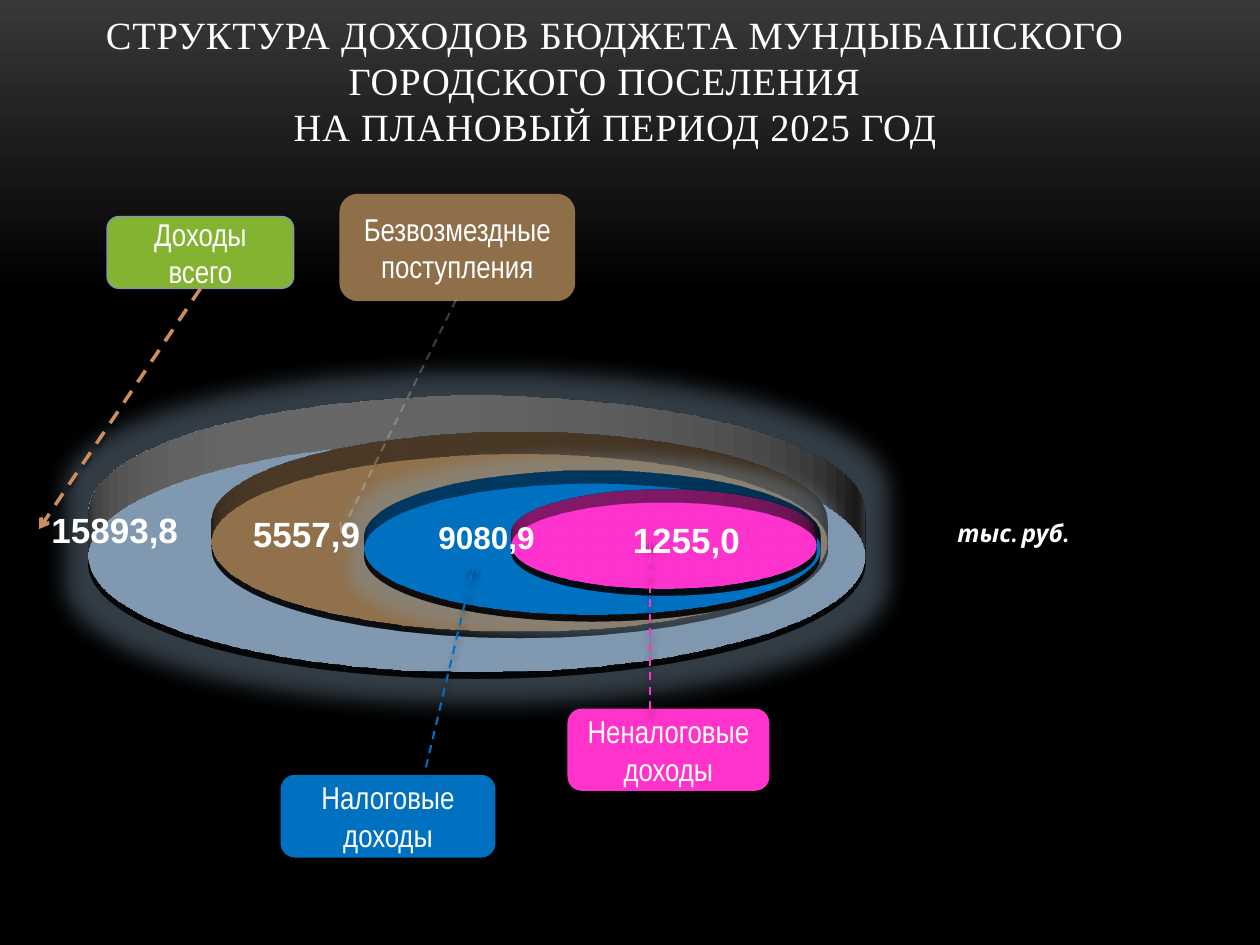
from lxml import etree
from pptx import Presentation
from pptx.dml.color import RGBColor
from pptx.enum import dml, shapes, text
from pptx.oxml import ns
from pptx.util import Pt

HUES = {
    "white": "FFFFFF", "black": "000000", "smoke": "383838",
    "steel": "7E97AD", "edge": "5D7080", "green": "83B330",
    "brown": "8F6F4A", "blue": "0070C0", "pink": "FF33CC",
    "copper": "CC8E60", "pale": "EFEAE6", "silver": "C8C8C8",
}
DISCS = [
    ((50.4, 185.8, 444.2, 264.2), "steel", "edge", "silver", 300, 30, 26),
    ((121, 253.4, 352.1, 113), "brown", "brown", "brown", 334, 29, 0),
    ((208.1, 275.8, 260.6, 76.3), "blue", "blue", "blue", 348, 36, 18),
    ((292.3, 286.6, 174.2, 50.4), "pink", "pink", "pink", 348, 36, 0),
]
TAGS = [
    ("Доходы всего", (61.2, 123.8, 106.6, 41), "green", "steel"),
    ("Безвозмездные поступления", (194.4, 111.2, 133.9, 60.5), "brown", "brown"),
    ("Налоговые доходы", (160.8, 443.2, 121.9, 46.4), "blue", "blue"),
    ("Неналоговые доходы", (324.7, 405.4, 114.5, 46.1), "pink", "pink"),
]
LINKS = [
    ((114.5, 164.9), (22.3, 302.4), "copper", 2, 100, 2),
    ((260.6, 171.4), (194.4, 305.3), "pale", 1.2, 25, 4),
    ((243.4, 438.5), (271.4, 320.4), "blue", 1.2, 100, 4),
    ((371.5, 405.4), (371.5, 305.3), "pink", 1.2, 100, 4),
    ((342, 80.6), (342, 80.6), "steel", 0.75, 100, 0),
]
SUMS = [
    ("15893,8", (22.3, 286.9, 117.4, 31.7), 20),
    ("5557,9", (137.5, 289.4, 98.6, 31.7), 20),
    ("1255,0", (354.5, 292.6, 90, 31.7), 20),
    ("9080,9", (243.4, 292.3, 88.6, 28.8), 18),
]


def rgb(name):
    """Give the colour with this name."""
    return RGBColor.from_string(HUES[name])


def pts(nums):
    """Turn plain numbers into lengths in points."""
    return [Pt(n) for n in nums]


def add(root, name, **attrs):
    """Add a drawing element under a node."""
    return etree.SubElement(root, ns.qn("a:" + name), **attrs)


def tint(node, name, alpha):
    """Add a see-through colour to an effect."""
    hue = add(node, "srgbClr", val=HUES[name])
    add(hue, "alpha", val=str(alpha * 1000))


def effect(shape, glow=0, drop=0, alpha=43):
    """Give a shape a glow and a downward shadow, or neither."""
    root = add(shape._element.spPr, "effectLst")
    if glow:
        tint(add(root, "glow", rad=str(Pt(glow))), "steel", 40)
    if drop:
        node = add(root, "outerShdw", blurRad=str(Pt(drop)),
                   dist=str(Pt(drop)), dir="5400000", rotWithShape="0")
        tint(node, "black", alpha)


def tilt(shape, angle, depth, side):
    """Lean a shape back and give it thickness."""
    props = shape._element.spPr
    scene = add(props, "scene3d")
    camera = add(scene, "camera", prst="orthographicFront")
    add(camera, "rot", lat=str(angle * 60000), lon="0", rev="0")
    add(scene, "lightRig", rig="threePt", dir="t")
    solid = add(props, "sp3d", extrusionH=str(Pt(depth)), prstMaterial="matte")
    add(add(solid, "extrusionClr"), "srgbClr", val=HUES[side])


def paint(shape, fill, edge):
    """Set the fill and the thin outline."""
    shape.fill.solid()
    shape.fill.fore_color.rgb = rgb(fill)
    shape.line.color.rgb = rgb(edge)
    shape.line.width = Pt(0.85)


def write(para, words, size, face, bold=False, slant=False):
    """Add one white run to a paragraph."""
    run = para.add_run()
    run.text = words
    font = run.font
    font.size, font.name, font.bold, font.italic = Pt(size), face, bold, slant
    font.color.rgb = rgb("white")
    return run


def heading(slide, box):
    """Place the slide title."""
    frame = slide.shapes.add_textbox(*pts(box)).text_frame
    frame.word_wrap = True
    para = frame.paragraphs[0]
    para.alignment = text.PP_ALIGN.CENTER
    para.line_spacing = Pt(26.3)
    lines = ["СТРУКТУРА ДОХОДОВ БЮДЖЕТА МУНДЫБАШСКОГО ГОРОДСКОГО ПОСЕЛЕНИЯ  ",
             "НА ПЛАНОВЫЙ ПЕРИОД 2025 ГОД"]
    for num, line in enumerate(lines):
        if num:
            para.add_line_break()
        run = write(para, line, 22, "Times New Roman")
        run.font._element.set("spc", "50")


def disc(slide, box, fill, edge, side, angle, depth, glow):
    """Draw a thick disc seen from above."""
    shape = slide.shapes.add_shape(shapes.MSO_SHAPE.OVAL, *pts(box))
    shape.rotation = 180
    paint(shape, fill, edge)
    effect(shape, glow, 4)
    tilt(shape, angle, depth, side)


def tag(slide, words, box, fill, edge):
    """Place a rounded label."""
    shape = slide.shapes.add_shape(shapes.MSO_SHAPE.ROUNDED_RECTANGLE, *pts(box))
    shape.shadow.inherit = False
    paint(shape, fill, edge)
    frame = shape.text_frame
    frame.word_wrap = True
    frame.vertical_anchor = text.MSO_ANCHOR.MIDDLE
    para = frame.paragraphs[0]
    para.alignment = text.PP_ALIGN.CENTER
    write(para, words, 18, "Arial Narrow")


def link(slide, start, end, hue, width, alpha, drop):
    """Draw an arrow, dashed when it has a shadow."""
    arrow = slide.shapes.add_connector(shapes.MSO_CONNECTOR.STRAIGHT,
                                       *pts(start + end))
    line = arrow.line
    line.color.rgb = rgb(hue)
    line.width = Pt(width)
    if drop:
        line.dash_style = dml.MSO_LINE.DASH
    node = line._get_or_add_ln()
    color = node.find(".//" + ns.qn("a:srgbClr"))
    add(color, "alpha", val=str(alpha * 1000))
    add(node, "tailEnd", type="arrow")
    effect(arrow, drop=drop, alpha=40)


def note(slide, words, box, size, face="Arial", slant=False):
    """Place a bold line of text."""
    frame = slide.shapes.add_textbox(*pts(box)).text_frame
    frame.word_wrap = True
    write(frame.paragraphs[0], words, size, face, True, slant)


def main():
    """Build the slide and save it."""
    deck = Presentation()
    deck.slide_width, deck.slide_height = Pt(720), Pt(540)
    slide = deck.slides.add_slide(deck.slide_layouts[6])
    back = slide.background.fill
    back.gradient()
    back.gradient_angle = 270
    for stop, name, pos in zip(back.gradient_stops, ("smoke", "black"), (0, 0.31)):
        stop.color.rgb = rgb(name)
        stop.position = pos
    heading(slide, (14.4, 2.9, 674.6, 67))
    for func, rows in ((disc, DISCS), (tag, TAGS), (link, LINKS), (note, SUMS)):
        for row in rows:
            func(slide, *row)
    note(slide, "тыс. руб.", (540, 292.3, 106.6, 24.5), 14, "Karla", True)
    deck.save("out.pptx")


if __name__ == "__main__":
    main()
